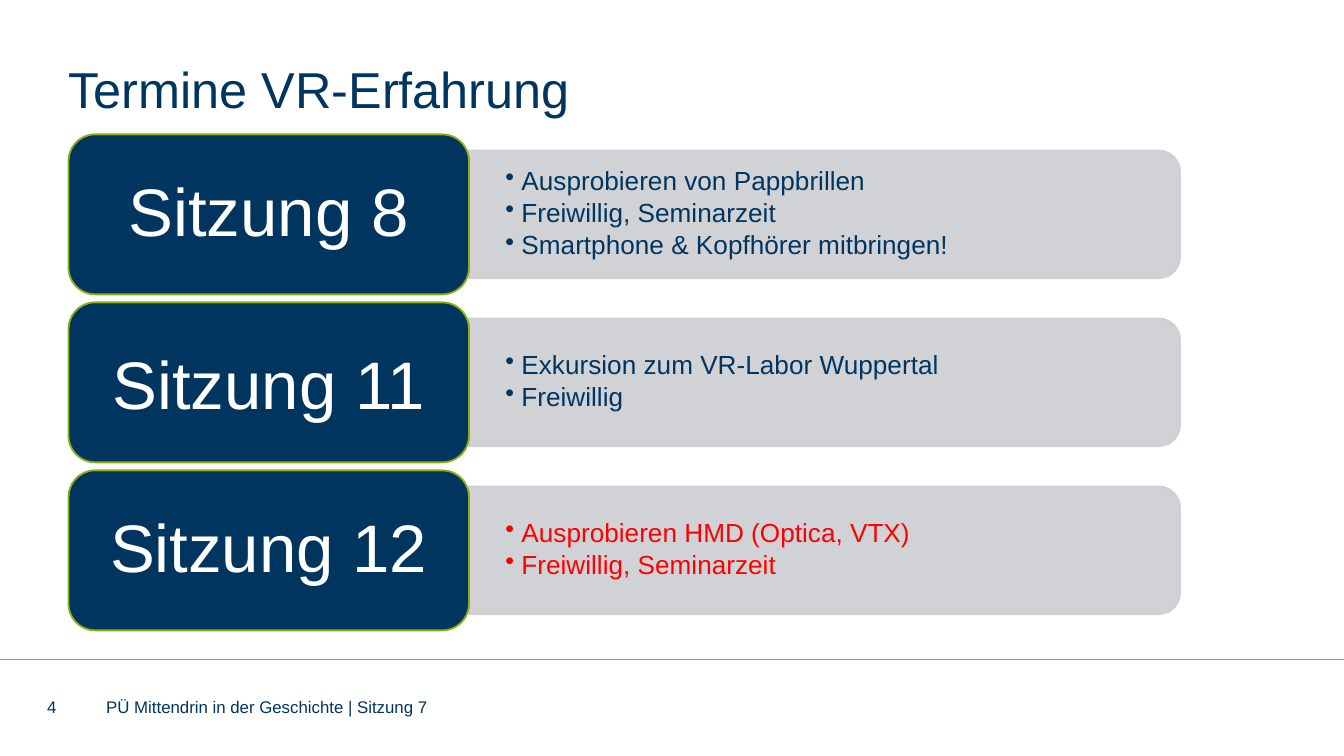
from lxml import etree
from pptx import Presentation
from pptx.dml.color import RGBColor
from pptx.enum.shapes import MSO_CONNECTOR, MSO_SHAPE
from pptx.enum.text import MSO_ANCHOR, PP_ALIGN
from pptx.oxml.ns import qn
from pptx.util import Inches, Pt

STRAIGHT = MSO_CONNECTOR.STRAIGHT
ROUNDED = MSO_SHAPE.ROUNDED_RECTANGLE
ROUNDED_TOP = MSO_SHAPE.ROUND_2_SAME_RECTANGLE
MIDDLE, TOP = MSO_ANCHOR.MIDDLE, MSO_ANCHOR.TOP
CENTER = PP_ALIGN.CENTER
NAVY, GREEN, GREY, RED, WHITE = "003560", "8DAE10", "CCCED2", "FF0000", "FFFFFF"


def rgb(color):
    return RGBColor.from_string(color)


def add_text(box, lines, size, color, anchor=MIDDLE, inset=(0, 0), bullets=False):
    """Add a text box with one paragraph per line; inset is (horizontal, vertical)."""
    tf = s.shapes.add_textbox(*map(Inches, box)).text_frame
    tf.word_wrap = True
    tf.vertical_anchor = anchor
    tf.margin_left = tf.margin_right = Inches(inset[0])
    tf.margin_top = tf.margin_bottom = Inches(inset[1])
    tf.text = "\n".join(lines)
    for p in tf.paragraphs:
        if bullets:
            p.level = 1
            p.line_spacing = 0.9
            p.space_after = Pt(2.1)
            pPr = p._p.get_or_add_pPr()
            pPr.set("marL", str(Inches(0.12)))
            pPr.set("indent", str(Inches(-0.12)))
            etree.SubElement(pPr, qn("a:buChar")).set("char", "•")
            # The paragraph end sets the size of the bullet
            etree.SubElement(p._p, qn("a:endParaRPr")).set("sz", str(size * 100))
        font = p.runs[0].font
        font.name, font.size = "Arial", Pt(size)
        font.color.rgb = rgb(color)
    return tf


prs = Presentation()
prs.slide_width = Inches(10)
prs.slide_height = prs.slide_width * 9 // 16
s = prs.slides.add_slide(prs.slide_layouts[6])

footer_line = s.shapes.add_connector(STRAIGHT, 0, Inches(4.91), Inches(10), Inches(4.91))
footer_line.line.color.rgb = rgb(GREEN)
footer_line.line.width = Pt(0.5)
etree.SubElement(footer_line._element.spPr, qn("a:effectLst"))

add_text((0.51, 0.43, 8.27, 0.51), ["Termine VR-Erfahrung"], 27, NAVY, anchor=TOP)

# Label, its line spacing, details and their colour
sessions = [
    ("Sitzung 8", 0.9, ["Ausprobieren von Pappbrillen", "Freiwillig, Seminarzeit",
                        "Smartphone & Kopfhörer mitbringen!"], NAVY),
    ("Sitzung 11", 1.0, ["Exkursion zum VR-Labor Wuppertal", "Freiwillig"], NAVY),
    ("Sitzung 12", 0.9, ["Ausprobieren HMD (Optica, VTX)", "Freiwillig, Seminarzeit"], RED),
]
BAR_W, BAR_H = 5.29, 0.95
LABEL_W, LABEL_H = 2.98, 1.19
BAR_CENTER = 0.51 + LABEL_W + BAR_W / 2

for i, (label, spacing, details, color) in enumerate(sessions):
    top = 1 + i * 1.25
    middle = top + LABEL_H / 2

    # The bar stands upright and is turned so that its round corners face right
    bar = s.shapes.add_shape(ROUNDED_TOP, Inches(BAR_CENTER - BAR_H / 2),
                             Inches(middle - BAR_W / 2), Inches(BAR_H), Inches(BAR_W))
    bar.rotation = 90
    bar.shadow.inherit = False
    bar.fill.solid()
    bar.fill.fore_color.rgb = rgb(GREY)
    bar.line.color.rgb = rgb(GREY)
    bar.line.width = Pt(1)
    for clr in bar._element.spPr.iter(qn("a:srgbClr")):
        etree.SubElement(clr, qn("a:alpha")).set("val", "90000")
    add_text((3.49, middle - 0.43, 5.24, 0.86), details, 14, color,
             inset=(0.27, 0.14), bullets=True)

    card = s.shapes.add_shape(ROUNDED, Inches(0.51), Inches(top), Inches(LABEL_W), Inches(LABEL_H))
    card.shadow.inherit = False
    card.fill.solid()
    card.fill.fore_color.rgb = rgb(NAVY)
    card.line.color.rgb = rgb(GREEN)
    card.line.width = Pt(1)
    p = add_text((0.57, top + 0.06, 2.86, 1.07), [label], 36, WHITE,
                 inset=(0.15, 0.07)).paragraphs[0]
    p.alignment = CENTER
    p.line_spacing = spacing

add_text((0.35, 5.2, 0.28, 0.12), ["4"], 9, NAVY)
add_text((0.79, 5.2, 6.02, 0.12), ["PÜ Mittendrin in der Geschichte | Sitzung 7"], 9, NAVY)

prs.save("out.pptx")
